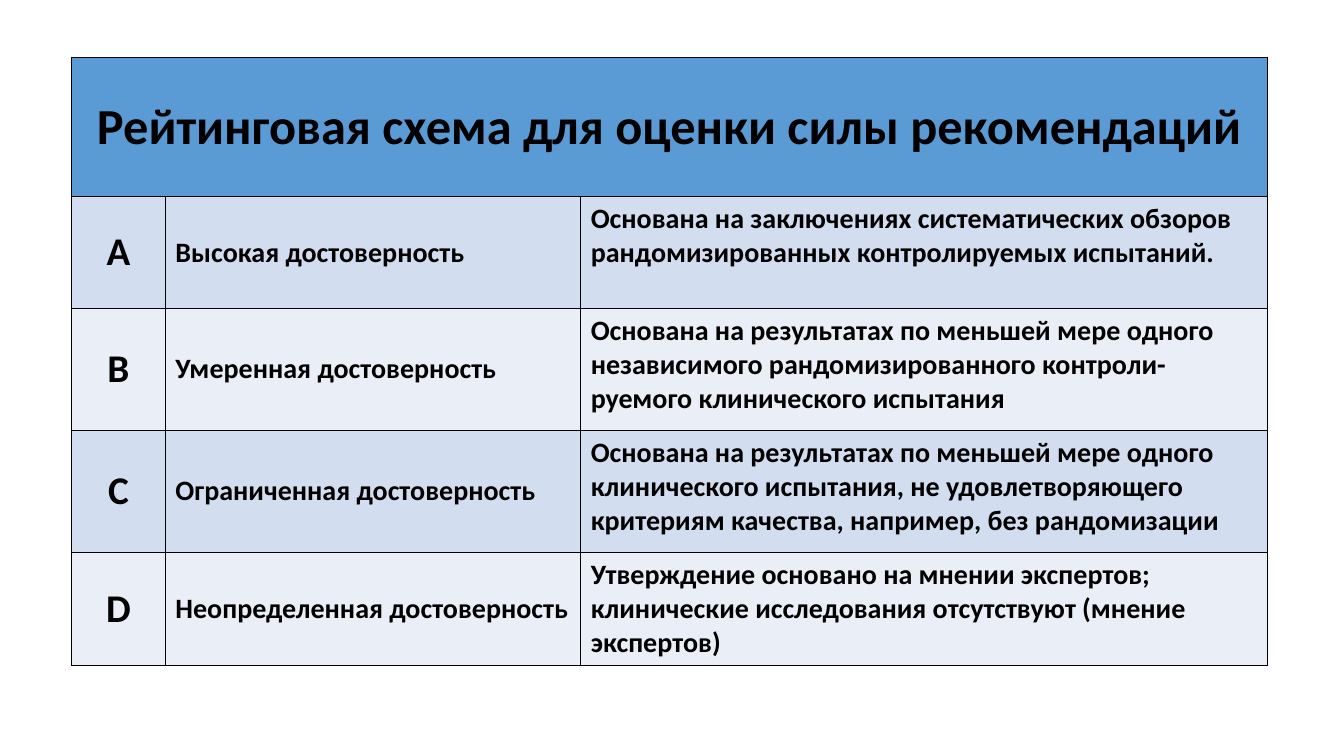
from dataclasses import dataclass
from lxml.etree import SubElement as Sub
from pptx import Presentation
from pptx.dml.color import RGBColor as Rgb
from pptx.enum.text import MSO_ANCHOR as Anchor, PP_ALIGN as Align
from pptx.oxml.ns import qn
from pptx.util import Pt


@dataclass(frozen=True)
class Theme:
    font: str = "Calibri"
    ink: str = "000000"
    head: str = "5B9BD5"
    bands: tuple = ("D2DEEF", "EAEFF7")
    title: int = 36
    grade: int = 28
    body: int = 20
    line: int = 1


THEME = Theme()
SCALE = 9144
COLS = (93, 412, 681)
ROWS = (138, 111, 121, 121, 111)
TITLE = "Рейтинговая схема для оценки силы рекомендаций"
GRADES = (
    ("A", "Высокая достоверность",
     "Основана на заключениях систематических обзоров "
     "рандомизированных контролируемых испытаний."),
    ("B", "Умеренная достоверность",
     "Основана на результатах по меньшей мере одного "
     "независимого рандомизированного контроли-руемого "
     "клинического испытания"),
    ("C", "Ограниченная достоверность",
     "Основана на результатах по меньшей мере одного "
     "клинического испытания, не удовлетворяющего "
     "критериям качества, например, без рандомизации"),
    ("D", "Неопределенная достоверность",
     "Утверждение основано на мнении экспертов; "
     "клинические исследования отсутствуют (мнение экспертов)"),
)


def px(size):
    return size * SCALE


def frame(cell):
    props = cell._tc.get_or_add_tcPr()
    for side in ("lnL", "lnR", "lnT", "lnB"):
        line = Sub(props, qn(f"a:{side}"), w=str(Pt(THEME.line)))
        fill = Sub(line, qn("a:solidFill"))
        Sub(fill, qn("a:srgbClr"), val=THEME.ink)


def paint(cell, color):
    cell.fill.solid()
    cell.fill.fore_color.rgb = Rgb.from_string(color)


def write(cell, text, size, align=Align.LEFT, anchor=Anchor.MIDDLE):
    cell.text = text
    cell.vertical_anchor = anchor
    para = cell.text_frame.paragraphs[0]
    para.alignment = align
    font = para.font
    font.name, font.size, font.bold = THEME.font, Pt(size), True
    font.color.rgb = Rgb.from_string(THEME.ink)


def rating(slide, left, top, width, height):
    box = map(px, (left, top, width, height))
    table = slide.shapes.add_table(len(ROWS), len(COLS), *box).table
    for col, size in zip(table.columns, COLS):
        col.width = px(size * width // sum(COLS))
    for row, size in zip(table.rows, ROWS):
        row.height = px(size * height // sum(ROWS))
    for cell in table.iter_cells():
        frame(cell)
    head = table.cell(0, 0)
    head.merge(table.cell(0, len(COLS) - 1))
    paint(head, THEME.head)
    write(head, TITLE, THEME.title, Align.CENTER)
    for i, (grade, level, basis) in enumerate(GRADES):
        cells = table.rows[i + 1].cells
        for cell in cells:
            paint(cell, THEME.bands[i % 2])
        write(cells[0], grade, THEME.grade, Align.CENTER)
        write(cells[1], level, THEME.body)
        write(cells[2], basis, THEME.body, anchor=Anchor.TOP)


def main():
    deck = Presentation()
    deck.slide_width, deck.slide_height = px(1333), px(750)
    slide = deck.slides.add_slide(deck.slide_layouts[6])
    rating(slide, 71, 57, sum(COLS), sum(ROWS))
    deck.save("out.pptx")


if __name__ == "__main__":
    main()
